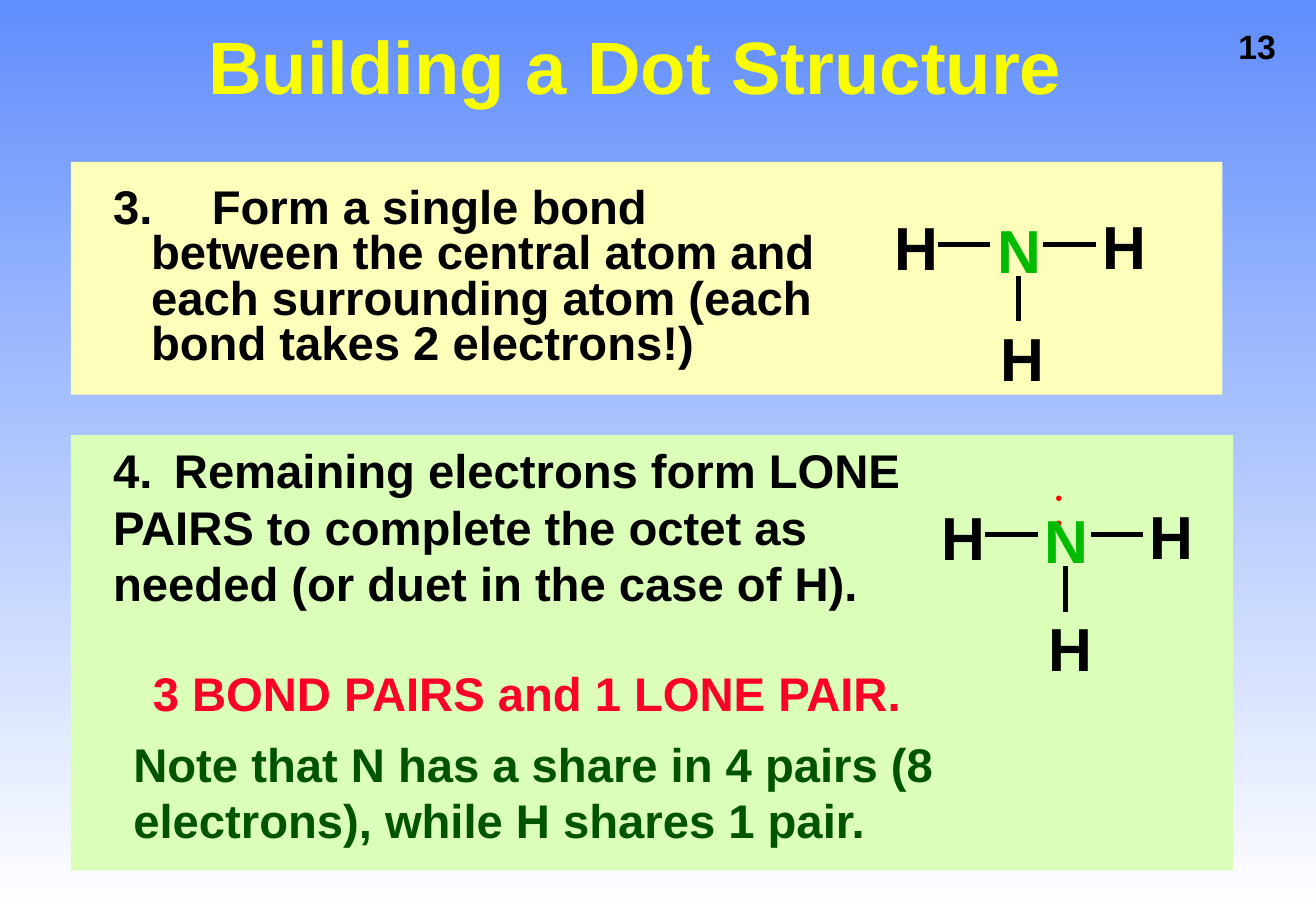
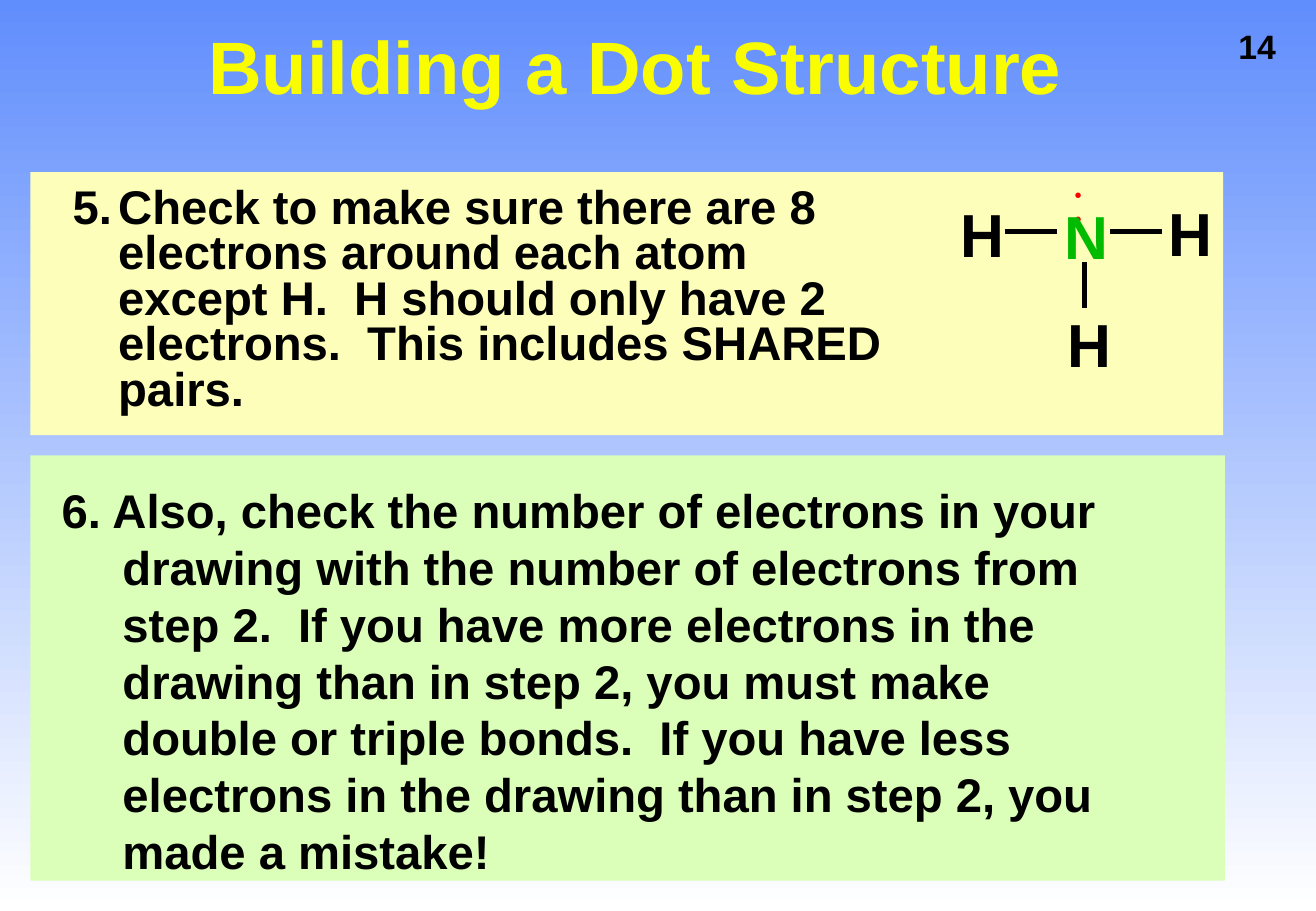
from pptx import Presentation
from pptx.dml.color import RGBColor
from pptx.enum.shapes import MSO_CONNECTOR, MSO_SHAPE
from pptx.enum.text import MSO_ANCHOR, PP_ALIGN
from pptx.oxml.ns import qn
from pptx.util import Pt

RECT, STRAIGHT = MSO_SHAPE.RECTANGLE, MSO_CONNECTOR.STRAIGHT
CENTER, MIDDLE = PP_ALIGN.CENTER, MSO_ANCHOR.MIDDLE

FONT = "Arial"
SKY = RGBColor(0x61, 0x8E, 0xFD)
WHITE = RGBColor(0xFF, 0xFF, 0xFF)
BLACK = RGBColor(0, 0, 0)
TITLE_YELLOW = RGBColor(0xFA, 0xFD, 0x00)
CREAM = RGBColor(0xFC, 0xFE, 0xB9)
MINT = RGBColor(0xDB, 0xFF, 0xB8)
ATOM_GREEN = RGBColor(0x00, 0xBB, 0x00)
DARK_GREEN = RGBColor(0x00, 0x54, 0x00)
CRIMSON = RGBColor(0xFC, 0x01, 0x28)
RED = RGBColor(0xFF, 0, 0)

# Content: boxes are (left, top, width, height) in points
TITLE = "Building a Dot Structure"
TIGHT = {"spacing": 0.8, "before": 8.4}
SLIDES = [
    {
        "number": 13,
        "panels": [(MINT, (42, 258, 689, 258)), (CREAM, (42, 96, 682.5, 138))],
        "texts": [
            ("3.\tForm a single bond between the central atom and each "
             "surrounding atom (each bond takes 2 electrons!)",
             (60, 108, 432, 108), {"hang": 22.5, **TIGHT}),
            ("4.\tRemaining electrons form LONE PAIRS to complete the octet "
             "as needed (or duet in the case of H).",
             (60, 258, 492, 142), {}),
            ("3 BOND PAIRS and 1 LONE PAIR.",
             (83.5, 390, 468, 41), {"color": CRIMSON}),
            ("Note that N has a share in 4 pairs (8 electrons), while H "
             "shares 1 pair.", (72, 432, 612, 74), {"color": DARK_GREEN}),
        ],
        # (left, top, has lone pair)
        "molecules": [(530, 124.5, False), (558, 296.5, True)],
    },
    {
        "number": 14,
        "panels": [(CREAM, (18, 102, 707, 156)), (MINT, (18, 270, 708, 252))],
        "texts": [
            ("Check to make sure there are 8 electrons around each atom "
             "except H.  H should only have 2 electrons.  This includes "
             "SHARED pairs.",
             (36, 108, 510, 156), {"hang": 27, "start": 5, **TIGHT}),
            ("6. Also, check the number of electrons in your drawing with "
             "the number of electrons from step 2.  If you have more "
             "electrons in the drawing than in step 2, you must make double "
             "or triple bonds.  If you have less electrons in the drawing "
             "than in step 2, you made a mistake!",
             (29.5, 282, 660, 276), {"hang": 36}),
        ],
        "molecules": [(569.5, 116.5, True)],
    },
]

# Molecule parts, relative to the left hydrogen
ATOMS = [("H", 0, 0, BLACK), ("H", 123.2, -0.7, BLACK),
         ("H", 63.2, 65.5, BLACK), ("N", 61.2, 1.4, ATOM_GREEN)]
BONDS = [(26, 20.5, 57, 20.5), (88.5, 20.5, 119.5, 20.5),
         (73.5, 39, 73.5, 66)]
LONE_PAIR = (67.5, -8.6, 7.9, 28)


def add_text(shapes, text, box, size=28, color=BLACK, bold=True, wrap=True,
             inset=True, align=None, anchor=None, spacing=None, before=None,
             hang=0, start=None):
    tf = shapes.add_textbox(*map(Pt, box)).text_frame
    tf.word_wrap = wrap
    if not inset:
        tf.margin_left = tf.margin_right = tf.margin_top = tf.margin_bottom = 0
    if anchor is not None:
        tf.vertical_anchor = anchor
    tf.text = text
    p = tf.paragraphs[0]
    p.alignment, p.line_spacing = align, spacing
    if before:
        p.space_before = Pt(before)
    pPr = p._p.get_or_add_pPr()
    if hang:
        pPr.set("marL", str(Pt(hang)))
        pPr.set("indent", str(-Pt(hang)))
    if start:
        number = pPr.makeelement(qn("a:buAutoNum"), {
            "type": "arabicPeriod", "startAt": str(start)})
        pPr.append(number)
    font = p.runs[0].font
    font.name, font.size, font.bold = FONT, Pt(size), bold
    font.color.rgb = color


def add_panel(s, color, box):
    panel = s.shapes.add_shape(RECT, *map(Pt, box))
    panel.shadow.inherit = False
    panel.fill.solid()
    panel.fill.fore_color.rgb = color
    panel.line.fill.background()


def add_molecule(s, x, y, lone_pair):
    shapes = s.shapes.add_group_shape().shapes
    if lone_pair:
        dx, dy, w, h = LONE_PAIR
        # The narrow box stacks the two dots
        add_text(shapes, "••", (x + dx, y + dy, w, h), size=12, color=RED,
                 bold=False, inset=False)
    for symbol, dx, dy, color in ATOMS:
        add_text(shapes, symbol, (x + dx, y + dy, 26, 43), size=36,
                 color=color, wrap=False, inset=False)
    for x1, y1, x2, y2 in BONDS:
        bond = shapes.add_connector(STRAIGHT, Pt(x + x1), Pt(y + y1),
                                    Pt(x + x2), Pt(y + y2))
        bond.line.color.rgb, bond.line.width = BLACK, Pt(3)
        spPr = bond._element.spPr
        spPr.append(spPr.makeelement(qn("a:effectLst"), {}))


def add_slide(prs, content):
    s = prs.slides.add_slide(prs.slide_layouts[6])
    for color, box in content["panels"]:
        add_panel(s, color, box)
    add_text(s.shapes, TITLE, (71.5, 12, 610.5, 60), size=44,
             color=TITLE_YELLOW, align=CENTER, anchor=MIDDLE, spacing=0.9)
    add_text(s.shapes, str(content["number"]), (727, 11.5, 39, 31), size=20,
             wrap=False)
    for text, box, style in content["texts"]:
        add_text(s.shapes, text, box, **style)
    for molecule in content["molecules"]:
        add_molecule(s, *molecule)


def main():
    prs = Presentation()
    prs.slide_width, prs.slide_height = Pt(780), Pt(540)
    # Shared background: blue fading down to white
    fill = prs.slide_master.background.fill
    fill.gradient()
    fill.gradient_angle = 270
    for stop, color, position in zip(fill.gradient_stops, (SKY, WHITE), (0, 1)):
        stop.color.rgb, stop.position = color, position
    for content in SLIDES:
        add_slide(prs, content)
    prs.save("out.pptx")


if __name__ == "__main__":
    main()
